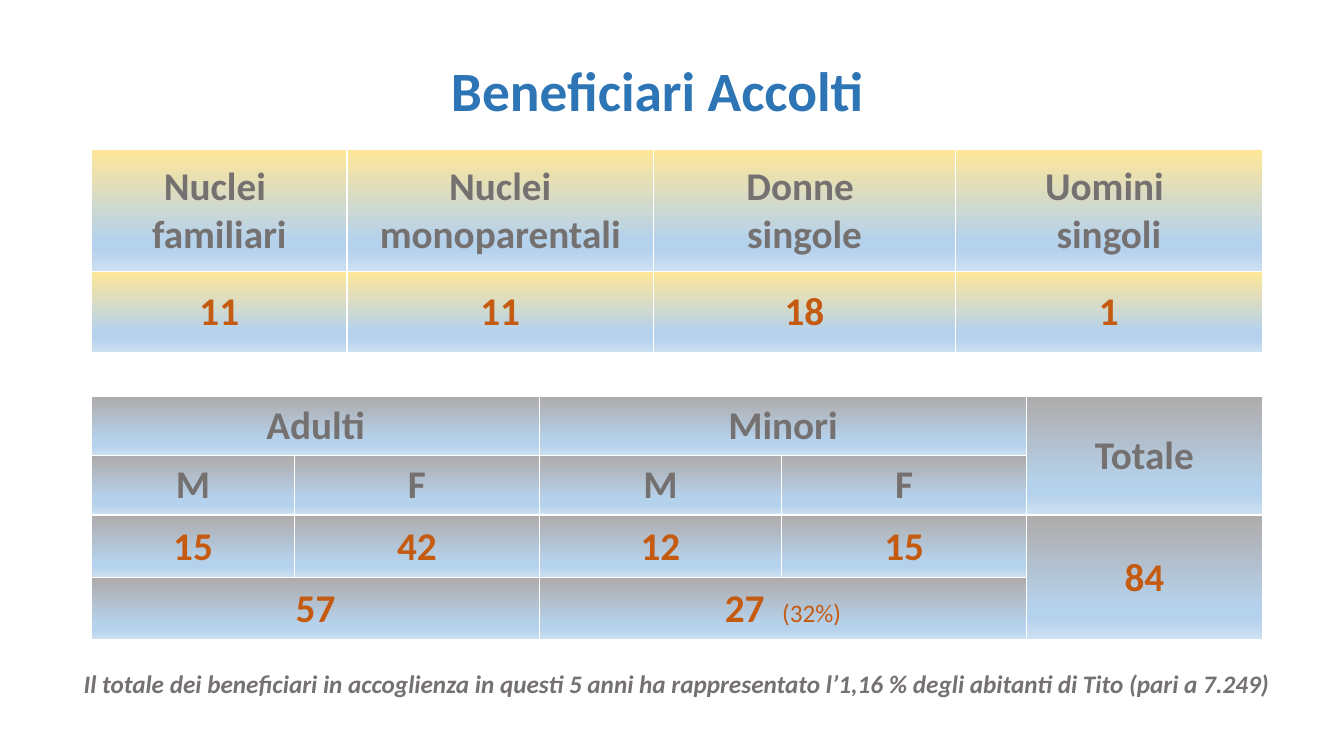
from dataclasses import dataclass

from lxml import etree
from pptx import Presentation
from pptx.dml.color import RGBColor
from pptx.enum.text import MSO_ANCHOR, PP_ALIGN
from pptx.oxml.ns import qn
from pptx.util import Pt

CENTER = PP_ALIGN.CENTER
TOP, MIDDLE, BOTTOM = MSO_ANCHOR.TOP, MSO_ANCHOR.MIDDLE, MSO_ANCHOR.BOTTOM

COLORS = {
    "title": "2E75B6", "label": "767171", "value": "C55A11", "border": "FFFFFF",
    "yellow": "FFE699", "grey": "AFABAB", "blue": "B5D2EC", "pale": "CEE1F2",
}

# Font formats: "color" names an entry of COLORS, the rest are font attributes
BASE = {"name": "Calibri", "size": Pt(28), "bold": True}
TITLE = BASE | {"size": Pt(39.6), "color": "title"}
LABEL = BASE | {"color": "label"}
VALUE = BASE | {"color": "value"}
SHARE = VALUE | {"size": Pt(18), "bold": False}
NOTE = LABEL | {"size": Pt(18), "italic": True}

SHARE_GAP = 6.3  # extra points between a value and its share


@dataclass
class TextBlock:
    text: str
    box: tuple[float, float, float, float]
    fmt: dict
    anchor: MSO_ANCHOR
    line_spacing: float = 1.0


@dataclass
class Grid:
    top: float
    top_color: str
    cols: list[float]
    rows: list[float]
    texts: list[list[str]]  # an empty text lies under a merged cell
    label_rows: int
    merges: list[tuple[int, int, int, int]]  # first row, column, last row, column


LEFT = 65.5

TEXTS = [
    TextBlock("Beneficiari Accolti", (109.5, 44, 720, 47.5), TITLE, BOTTOM, 0.9),
    TextBlock("Il totale dei beneficiari in accoglienza in questi 5 anni ha "
              "rappresentato l’1,16 % degli abitanti di Tito (pari a 7.249)",
              (13.5, 474, 940, 29), NOTE, TOP),
]

GRIDS = [
    Grid(106.8, "yellow", [182.3, 219, 215.8, 219], [87, 58.3],
         [["Nuclei \nfamiliari", "Nuclei monoparentali",
           "Donne \nsingole", "Uomini \nsingoli"],
          ["11", "11", "18", "1"]],
         1, []),
    Grid(282.8, "grey", [144.8, 175, 173, 175, 168.3], [42.5, 42.5, 44.7, 44.7],
         [["Adulti", "", "Minori", "", "Totale"],
          ["M", "F", "M", "F", ""],
          ["15", "42", "12", "15", "84"],
          ["57", "", "27 (32%)", "", ""]],
         2, [(0, 0, 0, 1), (0, 2, 0, 3), (0, 4, 1, 4),
             (3, 0, 3, 1), (3, 2, 3, 3), (2, 4, 3, 4)]),
]


def add_run(p, text: str, fmt: dict):
    r = p.add_run()
    r.text = text
    for key, value in fmt.items():
        if key == "color":
            r.font.color.rgb = RGBColor.from_string(COLORS[value])
        else:
            setattr(r.font, key, value)
    return r


def add_text(slide, block: TextBlock) -> None:
    sp = slide.shapes.add_textbox(*map(Pt, block.box))
    tf = sp.text_frame
    tf.word_wrap = True
    tf.vertical_anchor = block.anchor
    p = tf.paragraphs[0]
    p.alignment = CENTER
    p.line_spacing = block.line_spacing
    add_run(p, block.text, block.fmt)


def add_color(parent, color: str) -> None:
    etree.SubElement(parent, qn("a:srgbClr"), val=COLORS[color])


def paint_cell(cell, top_color: str) -> None:
    tc_pr = cell._tc.get_or_add_tcPr()
    # White borders come before the fill
    for side in ("lnL", "lnR", "lnT", "lnB"):
        ln = etree.SubElement(tc_pr, qn(f"a:{side}"), w=str(Pt(1)))
        add_color(etree.SubElement(ln, qn("a:solidFill")), "border")
    # Vertical gradient
    grad = etree.SubElement(tc_pr, qn("a:gradFill"), rotWithShape="1")
    stops = etree.SubElement(grad, qn("a:gsLst"))
    for pos, color in ((0, top_color), (74, "blue"), (83, "blue"), (100, "pale")):
        add_color(etree.SubElement(stops, qn("a:gs"), pos=str(pos * 1000)), color)
    etree.SubElement(grad, qn("a:lin"), ang=str(90 * 60000), scaled="0")


def fill_cell(cell, text: str, fmt: dict) -> None:
    tf = cell.text_frame
    for i, line in enumerate(text.split("\n")):
        p = tf.add_paragraph() if i else tf.paragraphs[0]
        p.alignment = CENTER
        value, bracket, share = line.partition("(")
        if bracket:
            add_run(p, value.rstrip(), fmt)
            gap = add_run(p, " ", fmt)
            gap.font._element.set("spc", str(round(SHARE_GAP * 100)))
            add_run(p, bracket + share, SHARE)
        else:
            add_run(p, line, fmt)


def add_grid(slide, grid: Grid) -> None:
    frame = slide.shapes.add_table(
        len(grid.rows), len(grid.cols), Pt(LEFT), Pt(grid.top),
        Pt(sum(grid.cols)), Pt(sum(grid.rows)))
    table = frame.table
    table.first_row = table.horz_banding = False
    for col, width in zip(table.columns, grid.cols):
        col.width = Pt(width)
    for row, height in zip(table.rows, grid.rows):
        row.height = Pt(height)
    for r1, c1, r2, c2 in grid.merges:
        table.cell(r1, c1).merge(table.cell(r2, c2))
    for i, texts in enumerate(grid.texts):
        for j, text in enumerate(texts):
            cell = table.cell(i, j)
            cell.vertical_anchor = MIDDLE
            cell.margin_left = cell.margin_right = cell.margin_top = Pt(0.7)
            cell.margin_bottom = Pt(0)
            paint_cell(cell, grid.top_color)
            if text:
                fill_cell(cell, text, LABEL if i < grid.label_rows else VALUE)


def main() -> None:
    prs = Presentation()
    prs.slide_width, prs.slide_height = Pt(960), Pt(540)
    slide = prs.slides.add_slide(prs.slide_layouts[6])
    # Title and note
    for block in TEXTS:
        add_text(slide, block)
    # Tables
    for grid in GRIDS:
        add_grid(slide, grid)
    prs.save("out.pptx")


if __name__ == "__main__":
    main()
